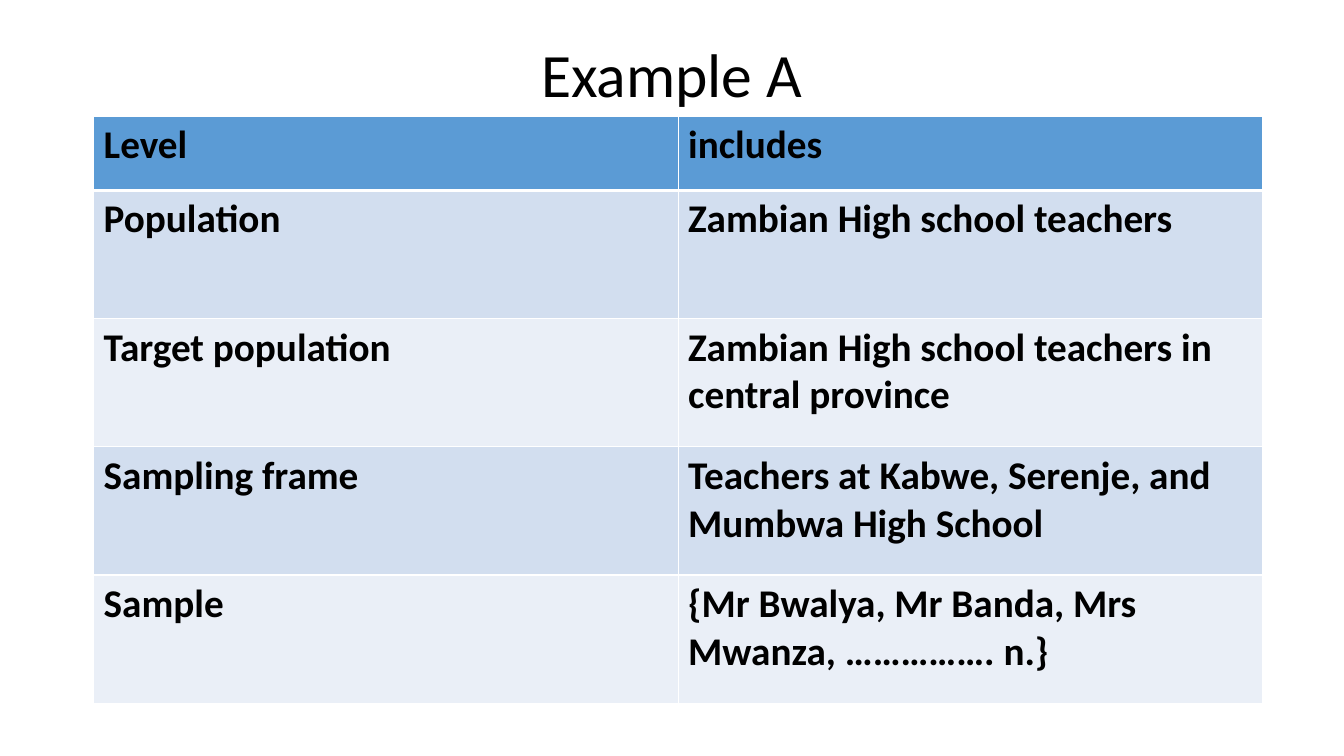
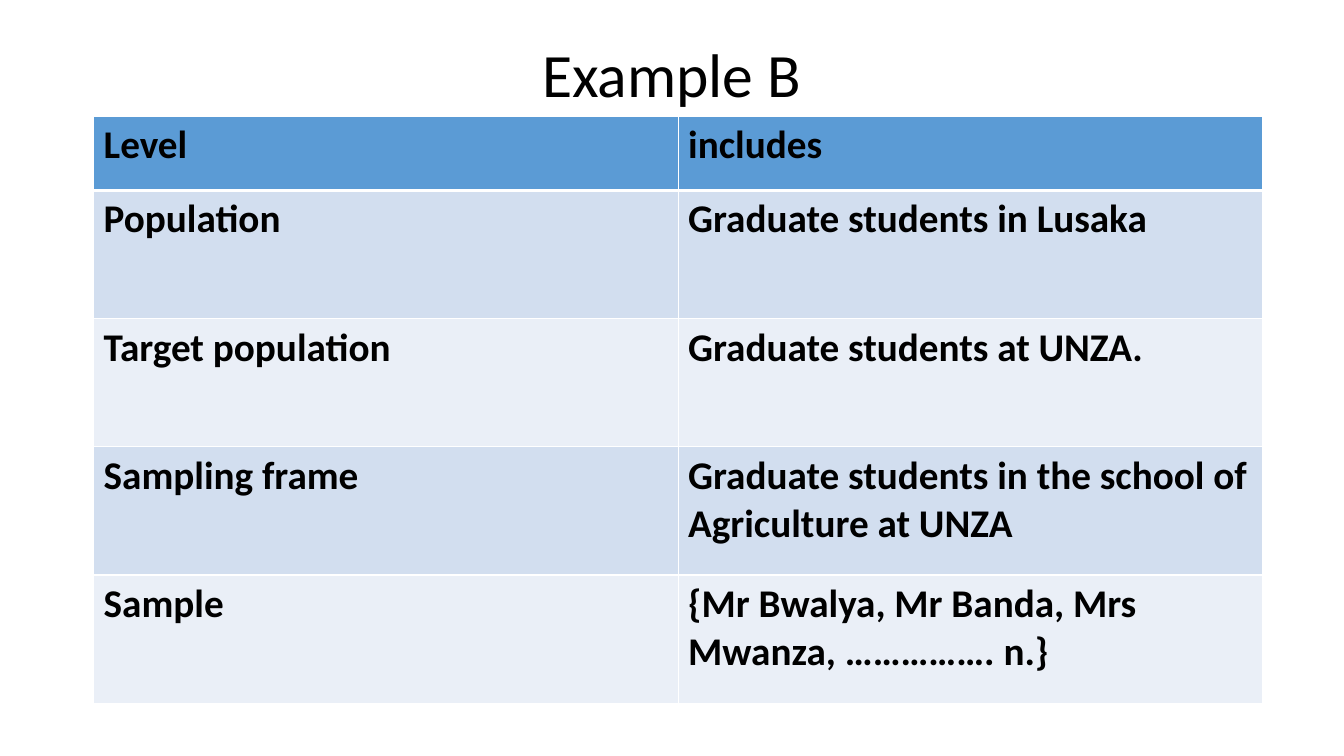
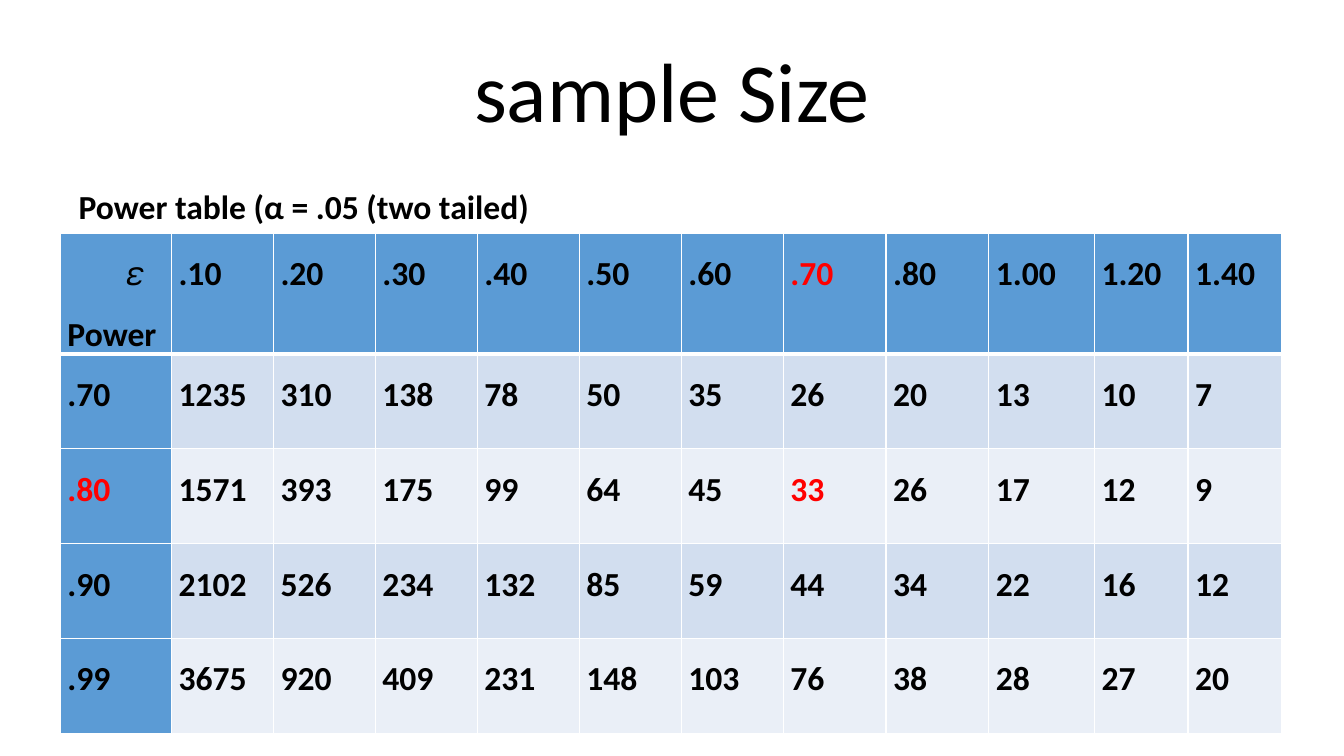
from pptx import Presentation
from pptx.dml.color import RGBColor
from pptx.enum.text import MSO_ANCHOR as Anchor, PP_ALIGN as Align
from pptx.oxml.ns import qn
from pptx.util import Cm, Pt
from lxml.etree import Element, SubElement as Sub

# Shared look
FONT = "Calibri"
BLACK, RED, WHITE = "000000", "FF0000", "FFFFFF"
HEAD, BANDS = "5B9BD5", ("D2DEEF", "EAEFF7")
BLANK = 6


def color(code):
    return RGBColor.from_string(code)


def add_run(para, text, size, ink=BLACK, bold=True):
    run = para.add_run()
    run.text = text
    font = run.font
    font.name, font.size, font.bold = FONT, Pt(size), bold
    font.color.rgb = color(ink)


def add_frame(slide, box):
    frame = slide.shapes.add_textbox(*map(Cm, box)).text_frame
    frame.word_wrap = True
    return frame


def add_title(slide, box, text, size):
    frame = add_frame(slide, box)
    frame.vertical_anchor = Anchor.BOTTOM
    para = frame.paragraphs[0]
    para.alignment, para.line_spacing = Align.CENTER, 0.9
    add_run(para, text, size, bold=False)


def add_lines(cell, top, base):
    """White cell borders, widths in points."""
    props = cell._tc.get_or_add_tcPr()
    sides = (("a:lnL", 1), ("a:lnR", 1), ("a:lnT", top), ("a:lnB", base))
    for spot, (tag, width) in enumerate(sides):
        line = Element(qn(tag), w=str(Pt(width)))
        fill = Sub(line, qn("a:solidFill"))
        Sub(fill, qn("a:srgbClr"), val=WHITE)
        props.insert(spot, line)


def add_grid(slide, box, cols, rows, side=False):
    """Banded table with a heading row, and a heading column if side is set."""
    shape = slide.shapes.add_table(len(rows), len(cols), *map(Cm, box))
    grid = shape.table
    grid.first_col = side
    for col, width in zip(grid.columns, cols):
        col.width = Cm(width)
    for i, row in enumerate(grid.rows):
        row.height = Cm(rows[i])
        for j, cell in enumerate(row.cells):
            head = i == 0 or (side and j == 0)
            cell.fill.solid()
            cell.fill.fore_color.rgb = color(HEAD if head else BANDS[(i - 1) % 2])
            add_lines(cell, 3 if i == 1 else 1, 3 if i == 0 else 1)
    return grid


# Example slides: level against what it includes
LEVELS = ("Level", "Population", "Target population", "Sampling frame", "Sample")
SAMPLE = "{Mr Bwalya, Mr Banda, Mrs Mwanza, ……………. n.}"
CASES = {
    "Example A": (
        "Zambian High school teachers",
        "Zambian High school teachers in central province",
        "Teachers at Kabwe, Serenje, and Mumbwa High School",
    ),
    "Example B": (
        "Graduate students in Lusaka",
        "Graduate students at UNZA.",
        "Graduate students in the school of Agriculture at UNZA",
    ),
}


def add_case(slide, name, groups):
    add_title(slide, (4.23, 0.73, 25.4, 2.2), name, 44)
    rows = [1.87] + [3.23] * 4
    grid = add_grid(slide, (2.36, 2.93, 29.46, sum(rows)), [14.73] * 2, rows)
    pairs = zip(LEVELS, ("includes", *groups, SAMPLE))
    for row, pair in zip(grid.rows, pairs):
        for cell, text in zip(row.cells, pair):
            add_run(cell.text_frame.paragraphs[0], text, 28)


# Power slide: sample size by effect and power
POWER = (
    ("𝜀", ".10", ".20", ".30", ".40", ".50", ".60", ".70", ".80", "1.00", "1.20", "1.40"),
    (".70", 1235, 310, 138, 78, 50, 35, 26, 20, 13, 10, 7),
    (".80", 1571, 393, 175, 99, 64, 45, 33, 26, 17, 12, 9),
    (".90", 2102, 526, 234, 132, 85, 59, 44, 34, 22, 16, 12),
    (".99", 3675, 920, 409, 231, 148, 103, 76, 38, 28, 27, 20),
)
MARKED = {(0, 7), (2, 0), (2, 7)}


def add_note(slide, box, text):
    frame = add_frame(slide, box)
    frame.margin_left = Cm(0.46)
    para = frame.paragraphs[0]
    para.line_spacing, para.space_before = 1.5, Pt(10)
    add_run(para, text, 24)


def add_value(para, text, ink=BLACK):
    para.alignment, para.line_spacing = Align.JUSTIFY, 1.5
    add_run(para, text, 24, ink)


def add_power(slide):
    add_title(slide, (4.23, 0.94, 25.4, 2.74), "sample Size", 60)
    add_note(slide, (1.52, 4.04, 30.81, 14.12), "Power table (α = .05 (two tailed)")
    cols = [2.8] + [2.57] * 6 + [2.59] * 2 + [2.66] + [2.36] * 2
    rows = [2.39] * 5
    grid = add_grid(slide, (1.52, 5.87, sum(cols), sum(rows)), cols, rows, True)
    for i, line in enumerate(POWER):
        for j, value in enumerate(line):
            cell = grid.cell(i, j)
            cell.margin_left = cell.margin_right = Cm(0.18)
            cell.margin_top = cell.margin_bottom = 0
            ink = RED if (i, j) in MARKED else BLACK
            add_value(cell.text_frame.paragraphs[0], str(value), ink)
    # Corner cell: indented effect symbol above the row label
    corner = grid.cell(0, 0).text_frame
    corner.paragraphs[0]._p.get_or_add_pPr().set("indent", str(Cm(1.5)))
    add_value(corner.add_paragraph(), "Power")


def main():
    deck = Presentation()
    deck.slide_width, deck.slide_height = Cm(33.87), Cm(19.05)
    layout = deck.slide_layouts[BLANK]
    for name, groups in CASES.items():
        add_case(deck.slides.add_slide(layout), name, groups)
    add_power(deck.slides.add_slide(layout))
    deck.save("out.pptx")


if __name__ == "__main__":
    main()
